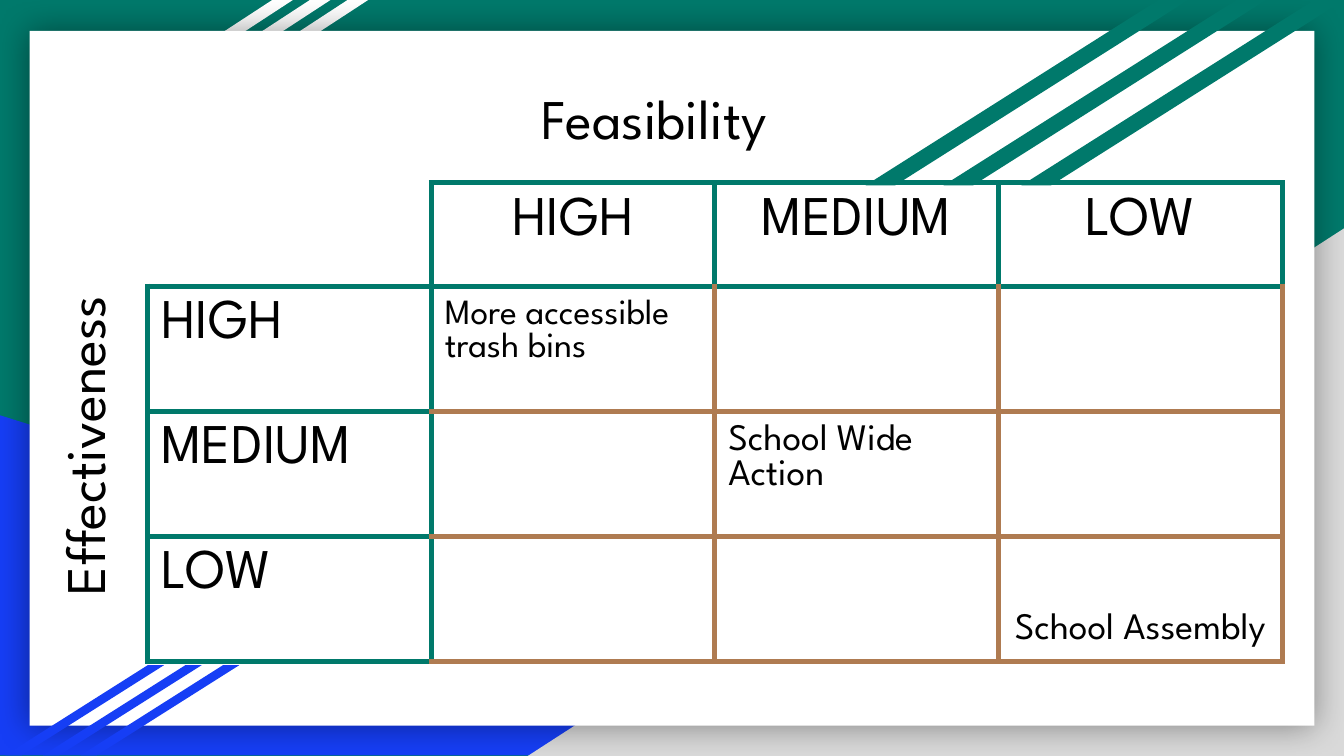
from lxml import etree
from pptx import Presentation
from pptx import util as u
from pptx.dml.color import RGBColor
from pptx.enum import shapes, text
from pptx.oxml.ns import qn

THEME = {
    "teal": "00796B", "blue": "163EF5", "grey": "D9D9D9", "white": "FFFFFF",
    "brown": "AF7B51", "black": "000000",
    "font": "League Spartan", "heading": 30, "note": 20, "small_note": 19, "rule": 3,
}

LEVELS = ["HIGH", "MEDIUM", "LOW"]
# (row, column): text, size, alignment, anchor
NOTES = {
    (1, 1): ("More accessible trash bins", "small_note", "LEFT", "TOP"),
    (2, 2): ("School Wide Action", "note", "LEFT", "TOP"),
    (3, 3): ("School Assembly", "note", "CENTER", "BOTTOM"),
}
# text, left, top, rotation
AXIS_TITLES = [("Feasibility", 3.09, 0.52, 0), ("Effectiveness", -1.16, 2.96, 270)]
TITLE_SIZE = 3.56, 0.71

# right-most left edge, step, top, width, height, slant, colour
TOP_STRIPES = 0.84, 0.28, 0, 1.9, 1.14, 1.532, "white"
FRONT_STRIPES = [(0.6, 0.28, 4.95, 1.18, 0.67, 1.58, "blue"),
                 (7.6, 0.58, 0, 2.4, 1.38, 1.58, "teal")]

TABLE_LEFT, TABLE_TOP = 1.1, 1.36
COL_WIDTH, ROW_HEIGHTS = 2.11, [0.77, 0.93, 0.93, 0.93]


def color(name):
    return RGBColor.from_string(THEME[name])


def add_shape(s, kind, box, fill):
    sp = s.shapes.add_shape(kind, *map(u.Inches, box))
    sp.shadow.inherit = False
    sp.fill.solid()
    sp.fill.fore_color.rgb = color(fill)
    sp.line.fill.background()
    return sp


def add_stripes(s, left, step, top, width, height, slant, fill):
    for i in range(3):
        box = (left - i * step, top, width, height)
        sp = add_shape(s, shapes.MSO_SHAPE.PARALLELOGRAM, box, fill)
        sp.adjustments[0] = slant


def add_glow_shadow(sp):
    """Give a shape a soft black shadow on all sides."""
    effects = sp._element.spPr.find(qn("a:effectLst"))
    shadow = etree.SubElement(effects, qn("a:outerShdw"), blurRad=str(u.Pt(18)),
                              dist="0", dir="0", algn="ctr", rotWithShape="0")
    rgb = etree.SubElement(shadow, qn("a:srgbClr"), val=THEME["black"])
    etree.SubElement(rgb, qn("a:alpha"), val="40000")


def write(tf, words, size="heading", align="LEFT"):
    tf.word_wrap = True
    p = tf.paragraphs[0]
    p.text = words
    p.alignment = text.PP_ALIGN[align]
    p.font.name = THEME["font"]
    p.font.size = u.Pt(THEME[size])
    p.font.color.rgb = color("black")


def set_margins(target):
    for side in ("left", "right", "top", "bottom"):
        setattr(target, f"margin_{side}", u.Inches(0.1))


def border_color(row, col, side):
    """Teal around the headings, brown inside, white outside the empty corner."""
    if row == col == 0 and side in "LT":
        return "white"
    heading = row == 0 or col == 0
    beside_heading = (side == "L" and col == 1) or (side == "T" and row == 1)
    return "teal" if heading or beside_heading else "brown"


def set_borders(cell, row, col):
    tcPr = cell._tc.get_or_add_tcPr()
    for i, side in enumerate("LRTB"):
        ln = etree.Element(qn(f"a:ln{side}"), w=str(u.Pt(THEME["rule"])))
        fill = etree.SubElement(ln, qn("a:solidFill"))
        etree.SubElement(fill, qn("a:srgbClr"), val=THEME[border_color(row, col, side)])
        tcPr.insert(i, ln)


def cell_content(row, col):
    if row == 0 and col:
        return LEVELS[col - 1], "heading", "CENTER", "TOP"
    if col == 0 and row:
        return LEVELS[row - 1], "heading", "LEFT", "TOP"
    return NOTES.get((row, col))


def add_matrix(s):
    n = len(LEVELS) + 1
    box = (TABLE_LEFT, TABLE_TOP, n * COL_WIDTH, sum(ROW_HEIGHTS))
    table = s.shapes.add_table(n, n, *map(u.Inches, box)).table
    table.first_row = table.horz_banding = False
    for row, height in enumerate(ROW_HEIGHTS):
        table.rows[row].height = u.Inches(height)
        for col in range(n):
            table.columns[col].width = u.Inches(COL_WIDTH)
            cell = table.cell(row, col)
            cell.fill.background()
            set_margins(cell)
            set_borders(cell, row, col)
            content = cell_content(row, col)
            if content:
                words, size, align, anchor = content
                write(cell.text_frame, words, size, align)
                cell.vertical_anchor = text.MSO_ANCHOR[anchor]


def main():
    prs = Presentation()
    prs.slide_width, prs.slide_height = u.Inches(10), u.Inches(5.625)
    s = prs.slides.add_slide(prs.slide_layouts[6])
    s.background.fill.solid()
    s.background.fill.fore_color.rgb = color("teal")

    triangle = shapes.MSO_SHAPE.RIGHT_TRIANGLE
    add_shape(s, triangle, (0, 3.09, 8.06, 2.53), "blue")
    grey_corner = add_shape(s, triangle, (3.92, 1.7, 6.08, 3.93), "grey")
    grey_corner._element.spPr.xfrm.set("flipH", "1")
    add_stripes(s, *TOP_STRIPES)
    sheet = add_shape(s, shapes.MSO_SHAPE.RECTANGLE, (0.22, 0.23, 9.56, 5.17), "white")
    add_glow_shadow(sheet)
    for stripes in FRONT_STRIPES:
        add_stripes(s, *stripes)

    add_matrix(s)
    for words, left, top, rotation in AXIS_TITLES:
        sp = s.shapes.add_textbox(*map(u.Inches, (left, top, *TITLE_SIZE)))
        sp.rotation = rotation
        set_margins(sp.text_frame)
        write(sp.text_frame, words, align="CENTER")

    prs.save("out.pptx")


if __name__ == "__main__":
    main()
